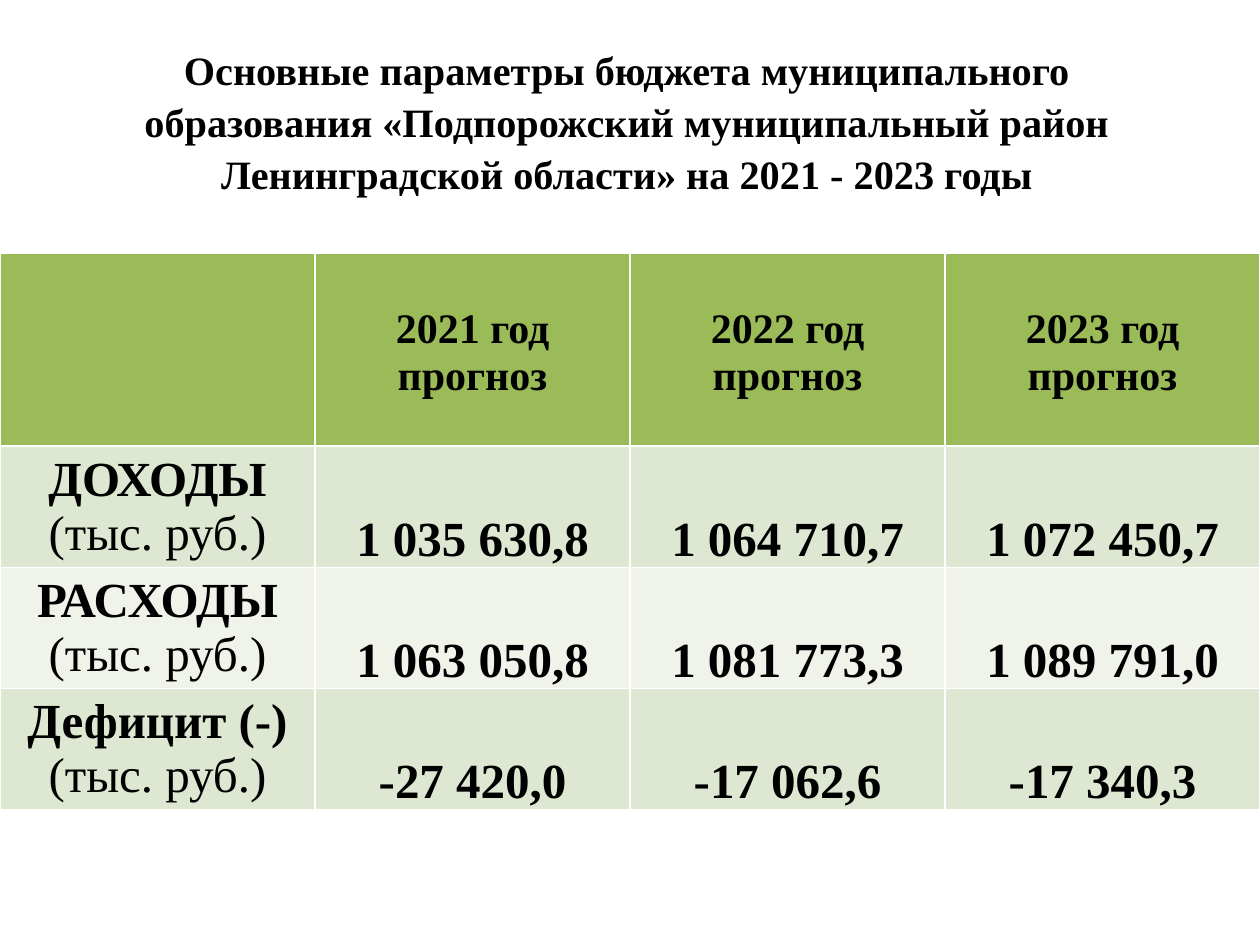
from pptx import Presentation
from pptx.dml.color import RGBColor
from pptx.enum.text import MSO_ANCHOR as ANCHOR, PP_ALIGN as ALIGN
from pptx.util import Pt

FONT = "Times New Roman"
BLACK, GREEN, BAND_DARK, BAND_LIGHT = "000000", "9BBB59", "DEE7D1", "EFF3EA"
TITLE_ONLY = 5

TITLE = ("Основные параметры бюджета муниципального образования «Подпорожский "
         "муниципальный район Ленинградской области» на 2021 - 2023 годы")
YEARS = ["2021", "2022", "2023"]
UNIT = "(тыс. руб.)"
BUDGET = [
    ("ДОХОДЫ", ["1 035 630,8", "1 064 710,7", "1 072 450,7"]),
    ("РАСХОДЫ", ["1 063 050,8", "1 081 773,3", "1 089 791,0"]),
    ("Дефицит (-)", ["-27 420,0", "-17 062,6", "-17 340,3"]),
]
COL_WIDTH, HEADER_HEIGHT, ROW_HEIGHT = 180, 110, 69


def rgb(color):
    return RGBColor.from_string(color)


def format_paragraph(p, size, bold=True):
    p.alignment = ALIGN.CENTER
    for r in p.runs:
        r.font.name = FONT
        r.font.size = Pt(size)
        r.font.bold = bold
        r.font.color.rgb = rgb(BLACK)


def add_title(s):
    sp = s.shapes.title
    sp.left, sp.top, sp.width, sp.height = Pt(60), Pt(26), Pt(597), Pt(85)
    tf = sp.text_frame
    tf.text = TITLE
    tf.word_wrap = True
    tf.vertical_anchor = ANCHOR.MIDDLE
    p = tf.paragraphs[0]
    p.line_spacing = 1.08
    format_paragraph(p, 23)


def fill_cell(cell, color):
    cell.fill.solid()
    cell.fill.fore_color.rgb = rgb(color)


def set_header(cell, year):
    cell.text = f"{year} год прогноз"
    cell.margin_top = Pt(30)
    format_paragraph(cell.text_frame.paragraphs[0], 24)


def set_label(cell, name):
    cell.text = f"{name}\n{UNIT}"
    heading, unit = cell.text_frame.paragraphs
    format_paragraph(heading, 28)
    format_paragraph(unit, 28, bold=False)


def set_value(cell, value):
    cell.text = value
    cell.vertical_anchor = ANCHOR.BOTTOM
    cell.margin_left = cell.margin_top = cell.margin_right = Pt(0.75)
    cell.margin_bottom = Pt(0)
    format_paragraph(cell.text_frame.paragraphs[0], 28)


def add_budget_table(s):
    n_rows, n_cols = len(BUDGET) + 1, len(YEARS) + 1
    height = HEADER_HEIGHT + ROW_HEIGHT * len(BUDGET)
    table = s.shapes.add_table(n_rows, n_cols, Pt(0), Pt(145),
                               Pt(COL_WIDTH * n_cols), Pt(height)).table
    for column in table.columns:
        column.width = Pt(COL_WIDTH)
    for i, row in enumerate(table.rows):
        row.height = Pt(ROW_HEIGHT if i else HEADER_HEIGHT)
        color = GREEN if i == 0 else BAND_DARK if i % 2 else BAND_LIGHT
        for cell in row.cells:
            fill_cell(cell, color)

    for j, year in enumerate(YEARS, 1):
        set_header(table.cell(0, j), year)
    for i, (name, values) in enumerate(BUDGET, 1):
        set_label(table.cell(i, 0), name)
        for j, value in enumerate(values, 1):
            set_value(table.cell(i, j), value)


def main():
    prs = Presentation()
    prs.slide_width, prs.slide_height = Pt(720), Pt(540)
    s = prs.slides.add_slide(prs.slide_layouts[TITLE_ONLY])
    add_title(s)
    add_budget_table(s)
    prs.save("out.pptx")


if __name__ == "__main__":
    main()
